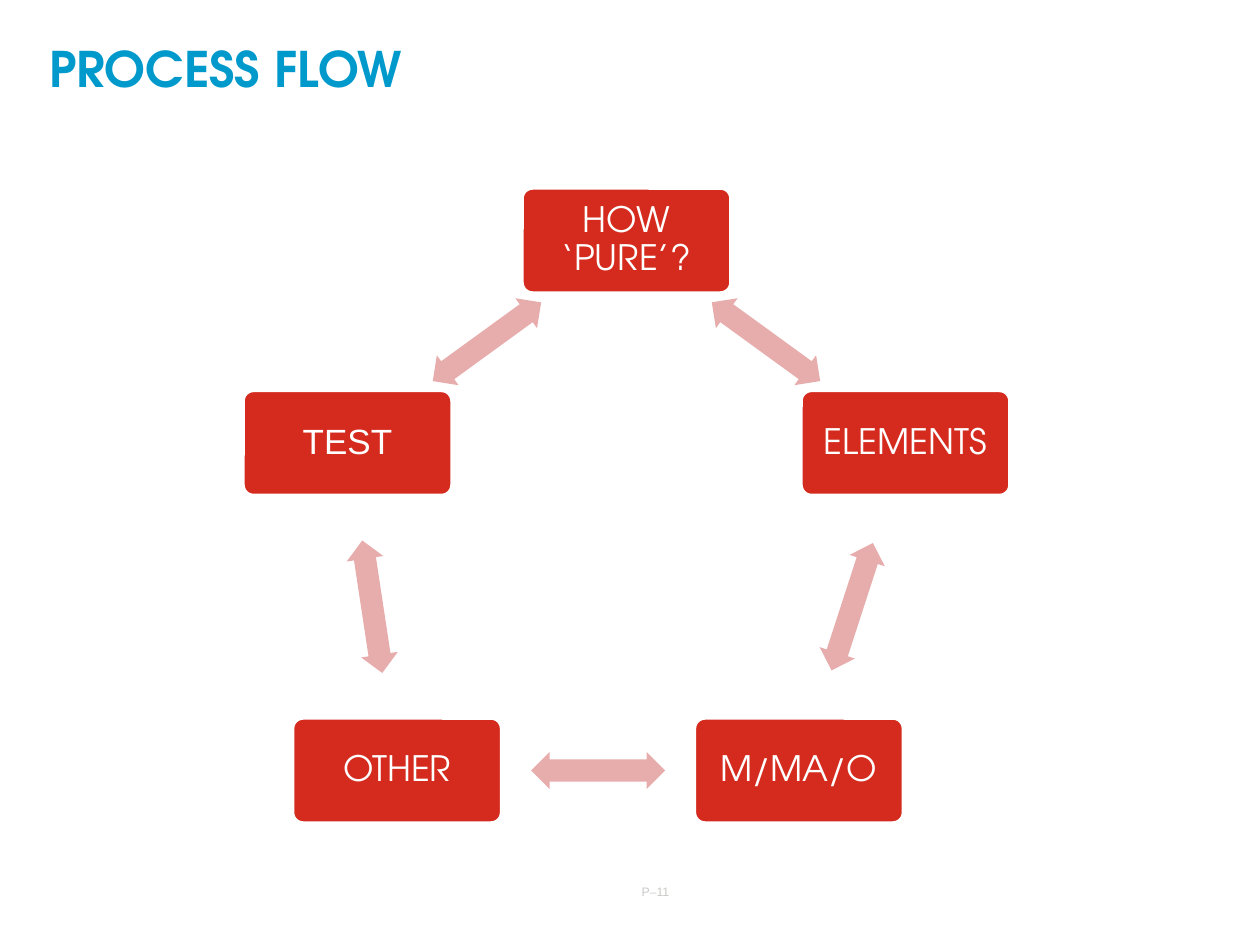
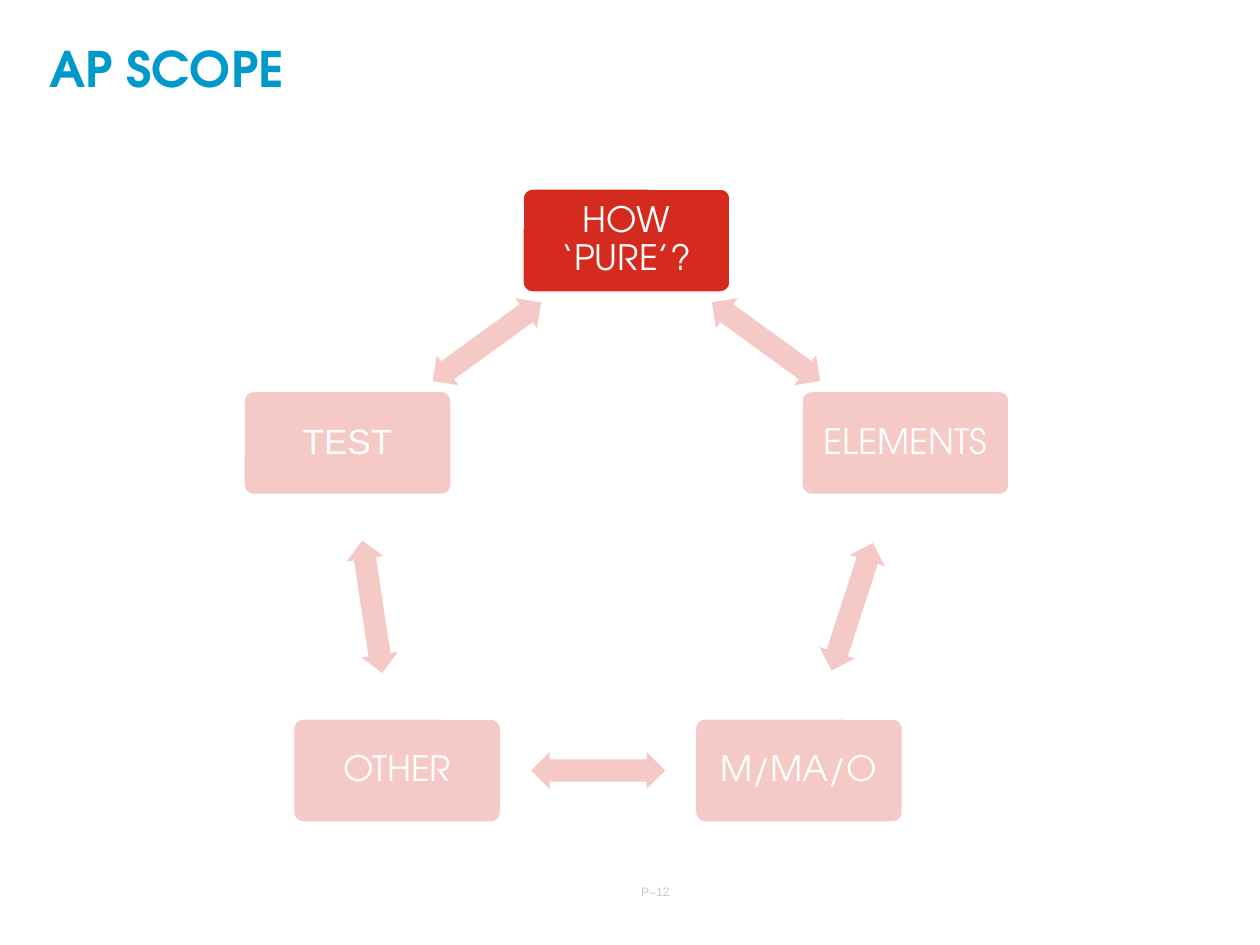
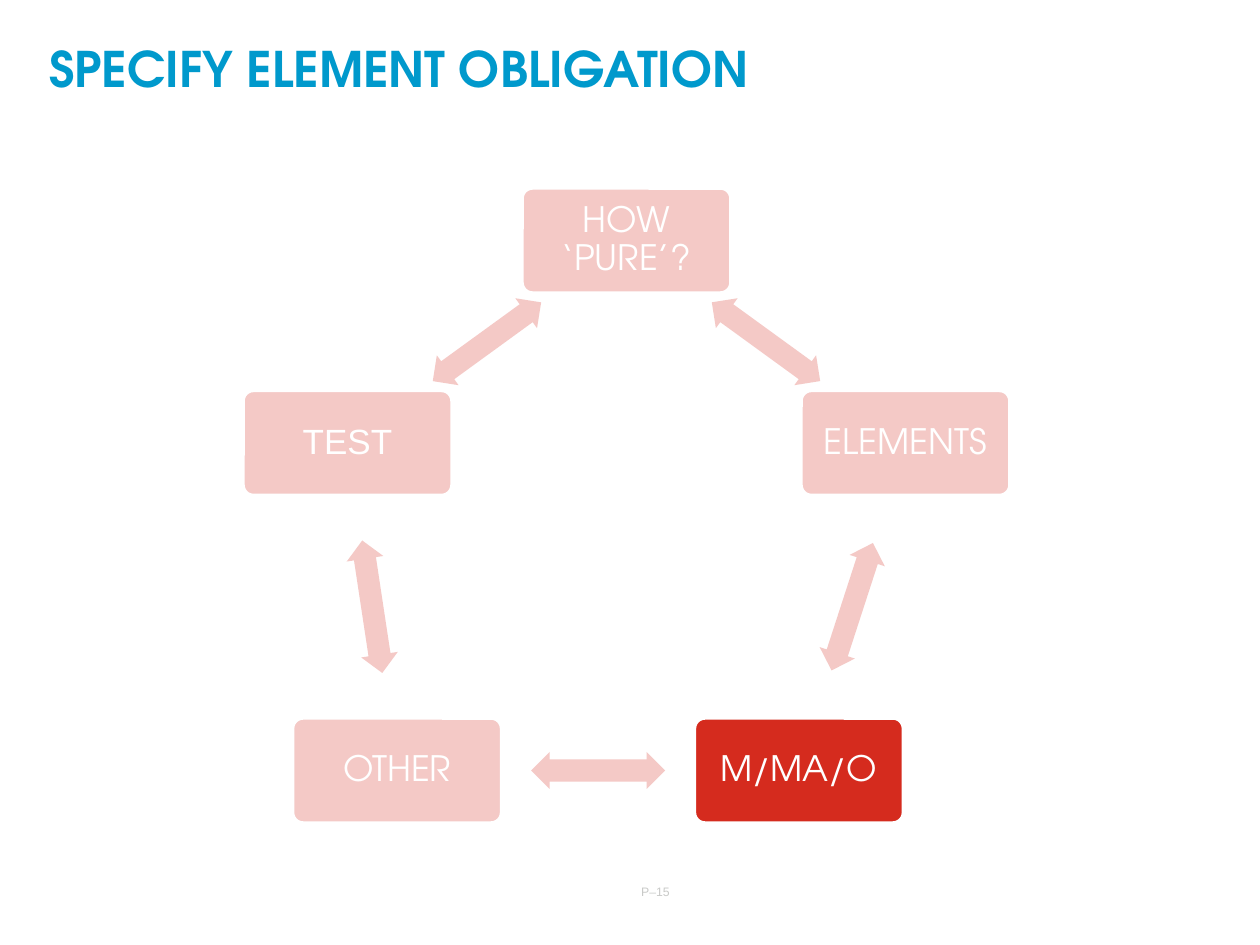
from collections import namedtuple
from dataclasses import dataclass
from math import atan2, cos, degrees, pi, sin

from lxml.etree import SubElement
from pptx import Presentation
from pptx.dml.color import RGBColor
from pptx.enum.shapes import MSO_SHAPE
from pptx.enum.text import MSO_ANCHOR, PP_ALIGN
from pptx.oxml.ns import qn
from pptx.util import Emu, Pt

PX_PER_INCH = 126
Box = namedtuple("Box", "x y w h")


@dataclass(frozen=True)
class Theme:
    title: str = "0099CC"
    red: str = "D52B1E"
    pink: str = "E7ADAC"
    white: str = "FFFFFF"
    grey: str = "C9CAC8"
    head_font: str = "TeX Gyre Adventor"
    plain_font: str = "Arial"
    dash_font: str = "TeX Gyre Schola"
    title_size: int = 28
    step_size: int = 20
    footer_size: int = 7
    faded: int = 25  # percent opacity


T = Theme()
SLIDE = Box(0, 0, 1260, 945)
TITLE = Box(44, 38, 1162, 97)
CYCLE = Box(243, 188, 767, 635)
FOOTER = Box(581, 874, 149, 35)
STEP_W, STEP_H = 209, 105
ARROW_W, ARROW_H = 134, 37

# Step label, font and sideways shift, clockwise from the top
STEPS = [
    ("HOW ‘PURE’?", T.head_font, 0),
    ("ELEMENTS", T.head_font, 0),
    ("M/MA/O", T.head_font, 0),
    ("OTHER", T.head_font, -57),
    ("TEST", T.plain_font, 0),
]
# Title, page number, highlighted step (None shows all at full strength)
PAGES = [
    ("PROCESS FLOW", 11, None),
    ("AP SCOPE", 12, 0),
    ("SPECIFY ELEMENT OBLIGATION", 15, 2),
]


def px(n):
    return Emu(round(n * 914400 / PX_PER_INCH))


def emu(box):
    return [px(n) for n in box]


def centred(x, y, w, h):
    return Box(x - w / 2, y - h / 2, w, h)


def write(sp, *runs, size, color, bold=False, align=PP_ALIGN.CENTER,
          anchor=MSO_ANCHOR.MIDDLE, margins=(13, 13, 13, 13), spacing=1.0):
    """Fill a shape with one paragraph of (text, font) runs."""
    tf = sp.text_frame
    tf.word_wrap = True
    tf.vertical_anchor = anchor
    tf.margin_left, tf.margin_top, tf.margin_right, tf.margin_bottom = emu(margins)
    p = tf.paragraphs[0]
    p.alignment = align
    p.line_spacing = spacing
    for text, font in runs:
        r = p.add_run()
        r.text = text
        r.font.name = font
        r.font.size = Pt(size)
        r.font.bold = bold
        r.font.color.rgb = RGBColor.from_string(color)


def add_filled(shapes, kind, box, color, opacity=100, line=None):
    sp = shapes.add_shape(kind, *emu(box))
    sp.shadow.inherit = False
    sp.fill.solid()
    sp.fill.fore_color.rgb = RGBColor.from_string(color)
    if opacity < 100:
        clr = sp.fill._xPr.find(qn("a:solidFill"))[0]
        SubElement(clr, qn("a:alpha"), val=str(opacity * 1000))
    if line:
        sp.line.color.rgb = RGBColor.from_string(line)
        sp.line.width = Pt(2)
    else:
        sp.line.fill.background()
    return sp


def add_title(s, box, text):
    sp = s.shapes.title
    sp.left, sp.top, sp.width, sp.height = emu(box)
    write(sp, (text, T.head_font), size=T.title_size, color=T.title, bold=True,
          align=PP_ALIGN.LEFT, anchor=MSO_ANCHOR.TOP, margins=(5, 0, 10, 0))


def add_cycle(s, box, active):
    """Five steps on a pentagon, with a double arrow halfway between neighbours."""
    shapes = s.shapes.add_group_shape().shapes
    count = len(STEPS)
    rx = (box.w - STEP_W) / 2 / sin(2 * pi / count)
    ry = (box.h - STEP_H) / (1 + cos(pi / count))
    cx, cy = box.x + box.w / 2, box.y + STEP_H / 2 + ry
    centres = []
    for i, (_, _, shift) in enumerate(STEPS):
        turn = 2 * pi * i / count
        centres.append((cx + rx * sin(turn) + shift, cy - ry * cos(turn)))

    for i, (label, font, _) in enumerate(STEPS):
        # Step
        x, y = centres[i]
        opacity = 100 if active in (None, i) else T.faded
        step = add_filled(shapes, MSO_SHAPE.ROUNDED_RECTANGLE,
                          centred(x, y, STEP_W, STEP_H), T.red, opacity, T.white)
        step.adjustments[0] = 0.1
        write(step, (label, font), size=T.step_size, color=T.white, spacing=0.9)

        # Arrow to the next step
        nx, ny = centres[(i + 1) % count]
        color, opacity = (T.pink, 100) if active is None else (T.red, T.faded)
        arrow = add_filled(shapes, MSO_SHAPE.LEFT_RIGHT_ARROW,
                           centred((x + nx) / 2, (y + ny) / 2, ARROW_W, ARROW_H),
                           color, opacity)
        arrow.adjustments[0], arrow.adjustments[1] = 0.6, 0.5
        arrow.rotation = round(degrees(atan2(ny - y, nx - x)) % 360, 1)


def add_footer(s, box, number):
    sp = s.shapes.add_textbox(*emu(box))
    write(sp, ("P", T.plain_font), ("–", T.dash_font), (str(number), T.plain_font),
          size=T.footer_size, color=T.grey, margins=(13, 6, 13, 6))


def main():
    prs = Presentation()
    prs.slide_width, prs.slide_height = px(SLIDE.w), px(SLIDE.h)
    title_only = prs.slide_layouts[5]
    for title, number, active in PAGES:
        s = prs.slides.add_slide(title_only)
        add_title(s, TITLE, title)
        add_cycle(s, CYCLE, active)
        add_footer(s, FOOTER, number)
    prs.save("out.pptx")


if __name__ == "__main__":
    main()
